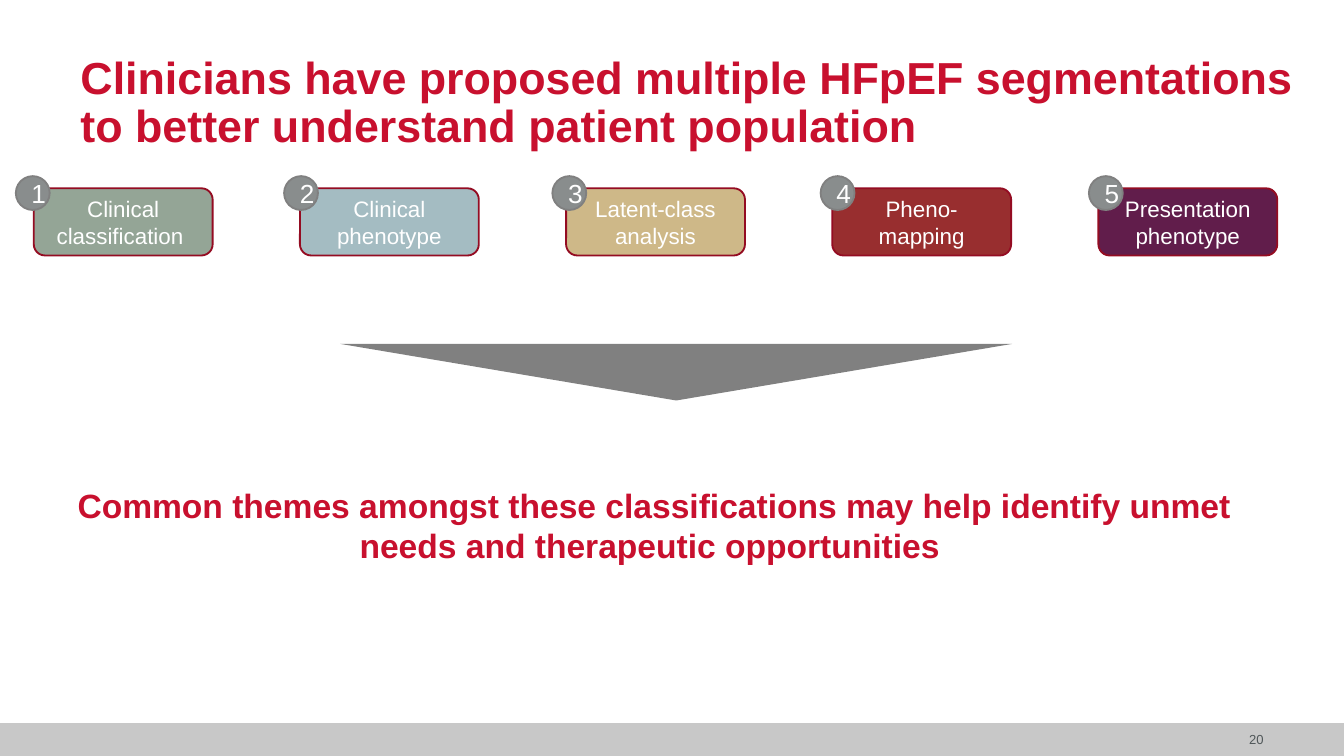
from pptx import Presentation
from pptx.dml.color import RGBColor
from pptx.enum.shapes import MSO_SHAPE as Shape
from pptx.enum.text import MSO_ANCHOR as Anchor, MSO_AUTO_SIZE as AutoSize, PP_ALIGN as Align
from pptx.util import Cm, Pt

FONT = "Arial"
RED = RGBColor(0xC8, 0x10, 0x2E)
DARK_RED = RGBColor(0x94, 0x0C, 0x22)
WHITE = RGBColor(0xFF, 0xFF, 0xFF)
TEXT_GRAY = RGBColor(0x50, 0x57, 0x59)
BADGE_GRAY = RGBColor(0x89, 0x8D, 0x8D)
MID_GRAY = RGBColor(0x80, 0x80, 0x80)
FOOTER_GRAY = RGBColor(0xC8, 0xC8, 0xC8)

SEGMENTATIONS = [
    ("Clinical classification ", RGBColor(0x94, 0xA5, 0x96)),
    ("Clinical phenotype", RGBColor(0xA4, 0xBC, 0xC2)),
    ("Latent-class analysis", RGBColor(0xCE, 0xB8, 0x88)),
    ("Pheno-mapping", RGBColor(0x98, 0x2E, 0x2F)),
    ("Presentation phenotype", RGBColor(0x61, 0x1D, 0x4B)),
]
BOX_LEFT, BOX_STEP = 0.64, 5.03
BADGE_LEFT, BADGE_STEP = 0.3, 5.07


def write(shape, text, size, color, align=Align.CENTER, bold=False, anchor=Anchor.MIDDLE):
    frame = shape.text_frame
    frame.word_wrap = True
    frame.vertical_anchor = anchor
    paragraph = frame.paragraphs[0]
    paragraph.alignment = align
    run = paragraph.add_run()
    run.text = text
    run.font.name = FONT
    run.font.size = Pt(size)
    run.font.bold = bold
    run.font.color.rgb = color
    return paragraph


def remove_margins(frame):
    frame.margin_left = frame.margin_top = frame.margin_right = frame.margin_bottom = 0


def add_shape(slide, kind, bounds, fill, line=None):
    shape = slide.shapes.add_shape(kind, *map(Cm, bounds))
    shape.shadow.inherit = False
    shape.fill.solid()
    shape.fill.fore_color.rgb = fill
    if line is None:
        shape.line.fill.background()
    else:
        shape.line.color.rgb = line
        shape.line.width = Pt(1)
    return shape


def add_text(slide, bounds, text, size, color, **options):
    box = slide.shapes.add_textbox(*map(Cm, bounds))
    write(box, text, size, color, **options)
    return box


def add_title(slide, text):
    title = slide.shapes.title
    title.left, title.top, title.width, title.height = map(Cm, (1.52, 1.02, 23.67, 1.9))
    remove_margins(title.text_frame)
    title.text_frame.auto_size = AutoSize.NONE
    paragraph = write(title, text, 24, RED, align=Align.LEFT, bold=True)
    paragraph.line_spacing = 0.9


def add_footer(slide, number):
    add_shape(slide, Shape.RECTANGLE, (0, 13.67, 25.4, 0.62), FOOTER_GRAY)
    box = add_text(slide, (22.86, 13.67, 1.02, 0.62), number, 7, TEXT_GRAY, align=Align.RIGHT)
    remove_margins(box.text_frame)


def add_segmentation(slide, index, label, fill):
    box_bounds = (BOX_LEFT + index * BOX_STEP, 3.56, 3.38, 1.27)
    box = add_shape(slide, Shape.ROUNDED_RECTANGLE, box_bounds, fill, DARK_RED)
    write(box, label, 12, WHITE)
    badge_bounds = (BADGE_LEFT + index * BADGE_STEP, 3.33, 0.64, 0.64)
    badge = add_shape(slide, Shape.OVAL, badge_bounds, BADGE_GRAY, MID_GRAY)
    write(badge, str(index + 1), 14, WHITE)


def main():
    presentation = Presentation()
    presentation.slide_width, presentation.slide_height = Cm(25.4), Cm(14.29)
    slide = presentation.slides.add_slide(presentation.slide_layouts[5])
    add_title(
        slide,
        "Clinicians have proposed multiple HFpEF segmentations "
        "to better understand patient population",
    )
    add_footer(slide, "20")
    for index, (label, fill) in enumerate(SEGMENTATIONS):
        add_segmentation(slide, index, label, fill)
    triangle = add_shape(slide, Shape.ISOSCELES_TRIANGLE, (6.43, 6.5, 12.7, 1.07), MID_GRAY)
    triangle.rotation = 180
    add_text(
        slide,
        (0.84, 9.04, 23.06, 1.8),
        "Common themes amongst these classifications may help identify "
        "unmet needs and therapeutic opportunities ",
        18,
        RED,
        bold=True,
        anchor=Anchor.TOP,
    )
    presentation.save("out.pptx")


if __name__ == "__main__":
    main()
